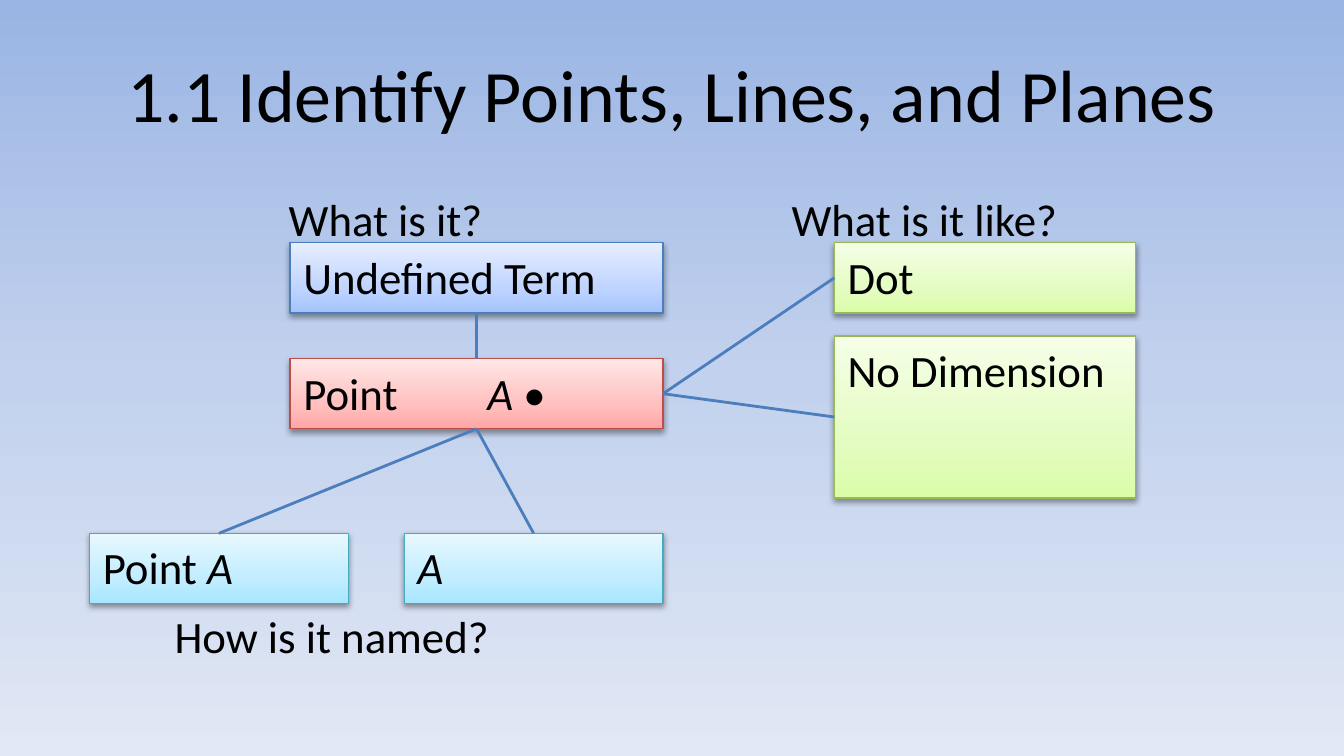
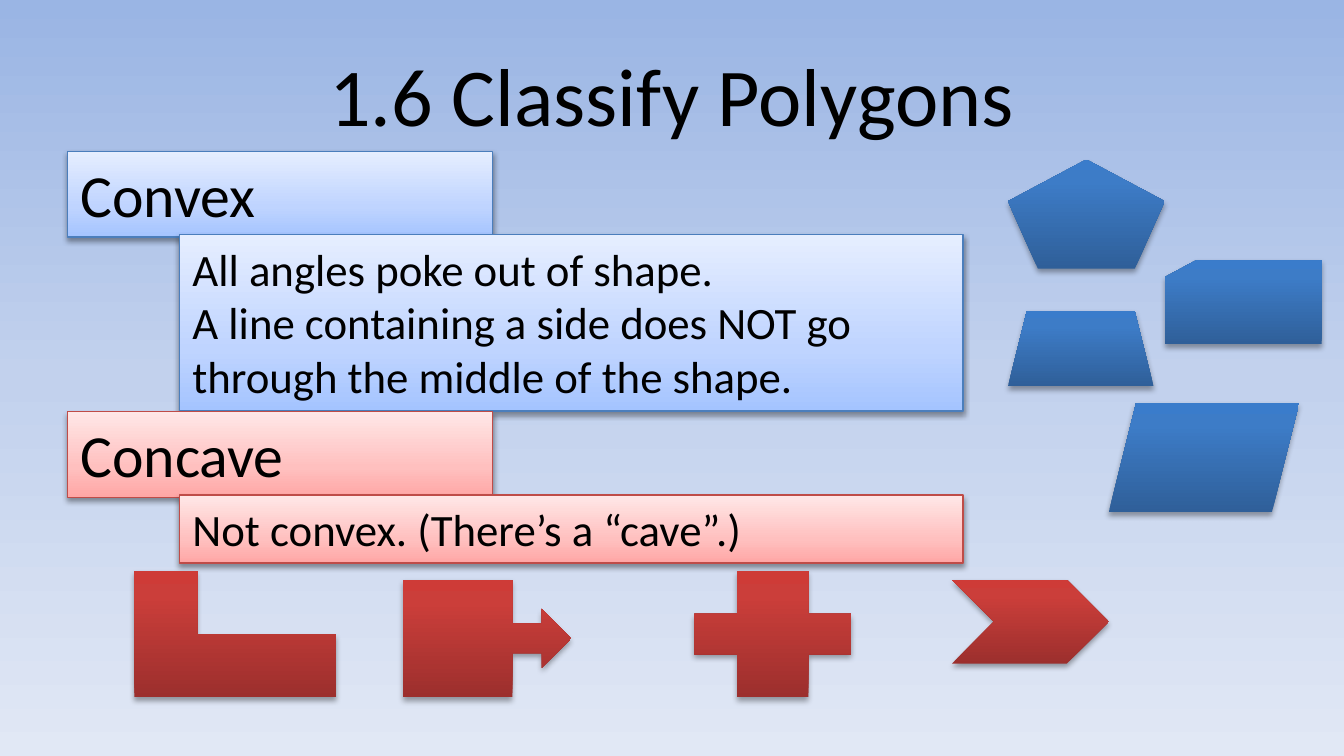
from lxml import etree
from pptx import Presentation
from pptx.dml.color import RGBColor
from pptx.enum.shapes import MSO_CONNECTOR, MSO_SHAPE
from pptx.enum.text import MSO_ANCHOR, PP_ALIGN
from pptx.oxml.ns import qn
from pptx.util import Inches, Pt

RECT = MSO_SHAPE.RECTANGLE
STRAIGHT = MSO_CONNECTOR.STRAIGHT
LEFT, CENTER = PP_ALIGN.LEFT, PP_ALIGN.CENTER
TOP, MIDDLE = MSO_ANCHOR.TOP, MSO_ANCHOR.MIDDLE
TOP_SITE, LEFT_SITE, BOTTOM_SITE, RIGHT_SITE = range(4)

# Shared look: gradients are (position in percent, colour)
FONT = "Calibri"
BLACK = RGBColor(0x00, 0x00, 0x00)
BLUE_LINE = RGBColor(0x4B, 0x7E, 0xBC)
RED_LINE = RGBColor(0xBF, 0x4C, 0x48)
GREEN_LINE = RGBColor(0x98, 0xB9, 0x55)
AQUA_LINE = RGBColor(0x46, 0xAA, 0xC5)


def stops(positions, *colors):
    return list(zip(positions, map(RGBColor.from_string, colors)))


PALE, DEEP = (0, 35, 100), (0, 80, 100)
SKY = stops((0, 50, 100), "9AB5E4", "C2D1ED", "E1E8F5")
BLUE = (stops(PALE, "A4C4FF", "BFD4FF", "E6EEFF"), BLUE_LINE)
RED = (stops(PALE, "FFA6A5", "FFC0BF", "FFE7E7"), RED_LINE)
GREEN = (stops(PALE, "DAFDA7", "E4FCC2", "F5FFE7"), GREEN_LINE)
AQUA = (stops(PALE, "A7E6FF", "C1EDFF", "E7F8FF"), AQUA_LINE)
DEEP_BLUE = (stops(DEEP, "2F5F99", "3D7CC7", "3A7CCB"), None)
DEEP_RED = (stops(DEEP, "9C2F2D", "CB3E3A", "CE3B37"), None)

# Grid: 120 columns by 90 rows; places are column, row, columns, rows
COLUMNS, ROWS = 120, 90
TITLE_PLACE = (6, 3.6, 108, 15)

# Points slide: a run starting with "*" is italic
POINTS_TITLE = ("1.1 Identify Points, Lines, and Planes", 39.6)
POINTS_BOXES = {
    "point": (["Point\t", "*A", " •"], RED, (25.9, 42.7, 33.3, 8.35)),
    "term": (["Undefined Term"], BLUE, (25.9, 28.9, 33.3, 8.35)),
    "point a": (["Point ", "*A"], AQUA, (8, 63.5, 23.1, 8.35)),
    "a": (["*A"], AQUA, (36.1, 63.5, 23.1, 8.35)),
    "dot": (["Dot"], GREEN, (74.5, 28.9, 26.9, 8.35)),
    "dimension": (["No Dimension"], GREEN, (74.5, 40, 26.9, 19.3)),
}
POINTS_LINKS = [
    ("term", BOTTOM_SITE, "point", TOP_SITE),
    ("point", BOTTOM_SITE, "point a", TOP_SITE),
    ("point", BOTTOM_SITE, "a", TOP_SITE),
    ("point", RIGHT_SITE, "dot", LEFT_SITE),
    ("point", RIGHT_SITE, "dimension", LEFT_SITE),
]
POINTS_LABELS = [
    ("What is it?", (24.6, 22, 34.6, 8)),
    ("What is it like?", (69.5, 22, 34.6, 8)),
    ("How is it named?", (14.4, 71.7, 64, 8)),
]
POINT_TAB = Inches(1.37)

# Polygons slide: term, explanation, colours, first row, explanation rows
POLYGONS_TITLE = ("1.6 Classify Polygons", 44)
POLYGON_TERMS = [
    ("Convex", ["All angles poke out of shape.",
                "A line containing a side does NOT go through the middle of the shape."],
     BLUE, 18, 21),
    ("Concave", ["Not convex. (There’s a “cave”.)"], RED, 49, 8.1),
]
TERM_ROWS, EXPLANATION_DROP = 10.2, 9.95
CROSS = MSO_SHAPE.CROSS
CROSS_ARM = 0.34
POLYGONS = [
    (MSO_SHAPE.REGULAR_PENTAGON, DEEP_BLUE, (90, 19, 14, 13)),
    (MSO_SHAPE.PARALLELOGRAM, DEEP_BLUE, (99, 48, 17, 13)),
    (MSO_SHAPE.TRAPEZOID, DEEP_BLUE, (90, 37, 13, 9)),
    (MSO_SHAPE.FLOWCHART_CARD, DEEP_BLUE, (104, 31, 14, 10)),
    (MSO_SHAPE.from_xml("corner"), DEEP_RED, (12, 68, 18, 15)),
    (MSO_SHAPE.RIGHT_ARROW_CALLOUT, DEEP_RED, (36, 69, 15, 14)),
    (CROSS, DEEP_RED, (62, 68, 14, 15)),
    (MSO_SHAPE.CHEVRON, DEEP_RED, (85, 69, 14, 10)),
]

deck = Presentation()
deck.slide_width, deck.slide_height = Inches(10), Inches(5.625)


def on_grid(place):
    column, row = deck.slide_width / COLUMNS, deck.slide_height / ROWS
    return [round(length * unit) for length, unit in zip(place, (column, row) * 2)]


def set_gradient(fill, element, colors, angle):
    fill.gradient()
    fill.gradient_angle = angle
    stop_list = next(element.iter(qn("a:gsLst")))
    for stop in list(stop_list):
        stop_list.remove(stop)
    for position, color in colors:
        stop = etree.SubElement(stop_list, qn("a:gs"), pos=str(position * 1000))
        etree.SubElement(stop, qn("a:srgbClr"), val=str(color))


def add_shadow(shape, opacity, distance):
    shape.shadow.inherit = False
    effects = shape.element.spPr.find(qn("a:effectLst"))
    shadow = etree.SubElement(
        effects, qn("a:outerShdw"), blurRad=str(Pt(3.1)), dist=str(Pt(distance)),
        dir="5400000", rotWithShape="0")
    color = etree.SubElement(shadow, qn("a:srgbClr"), val=str(BLACK))
    etree.SubElement(color, qn("a:alpha"), val=str(opacity * 1000))


def write(shape, paragraphs, size, align=LEFT, anchor=TOP):
    """Each paragraph is a list of runs."""
    frame = shape.text_frame
    frame.word_wrap = True
    frame.vertical_anchor = anchor
    for index, runs in enumerate(paragraphs):
        para = frame.add_paragraph() if index else frame.paragraphs[0]
        para.alignment = align
        for text in runs:
            span = para.add_run()
            span.text = text.removeprefix("*")
            span.font.name, span.font.size = FONT, Pt(size)
            span.font.color.rgb = BLACK
            if text.startswith("*"):
                span.font.italic = True


def add_figure(slide, kind, look, place):
    colors, outline = look
    shape = slide.shapes.add_shape(kind, *on_grid(place))
    set_gradient(shape.fill, shape.element, colors, 90)
    if outline is None:
        shape.line.fill.background()
        add_shadow(shape, 35, 1.8)
    else:
        shape.line.color.rgb, shape.line.width = outline, Pt(0.75)
        add_shadow(shape, 38, 1.6)
    return shape


def add_box(slide, paragraphs, look, place, size=24):
    box = add_figure(slide, RECT, look, place)
    write(box, paragraphs, size)
    return box


def add_link(slide, start, start_site, end, end_site):
    link = slide.shapes.add_connector(STRAIGHT, 0, 0, 0, 0)
    link.begin_connect(start, start_site)
    link.end_connect(end, end_site)
    link.line.color.rgb, link.line.width = BLUE_LINE, Pt(1.5)
    etree.SubElement(link.element.spPr, qn("a:effectLst"))


def add_slide(text, size):
    slide = deck.slides.add_slide(deck.slide_layouts.get_by_name("Title Only"))
    title = slide.shapes.title
    title.left, title.top, title.width, title.height = on_grid(TITLE_PLACE)
    write(title, [[text]], size, CENTER, MIDDLE)
    return slide


def build_points():
    slide = add_slide(*POINTS_TITLE)
    boxes = {name: add_box(slide, [runs], look, place)
             for name, (runs, look, place) in POINTS_BOXES.items()}
    # Tab stop between the word and the drawn point
    properties = boxes["point"].text_frame.paragraphs[0]._p.get_or_add_pPr()
    tabs = etree.SubElement(properties, qn("a:tabLst"))
    etree.SubElement(tabs, qn("a:tab"), pos=str(POINT_TAB), algn="l")
    for start, start_site, end, end_site in POINTS_LINKS:
        add_link(slide, boxes[start], start_site, boxes[end], end_site)
    for text, place in POINTS_LABELS:
        write(slide.shapes.add_textbox(*on_grid(place)), [[text]], 24)


def build_polygons():
    slide = add_slide(*POLYGONS_TITLE)
    for term, lines, look, row, rows in POLYGON_TERMS:
        add_box(slide, [[term]], look, (6, row, 38, TERM_ROWS), 32)
        add_box(slide, [[line] for line in lines], look,
                (16, row + EXPLANATION_DROP, 70, rows))
    for kind, look, place in POLYGONS:
        figure = add_figure(slide, kind, look, place)
        if kind == CROSS:
            figure.adjustments[0] = CROSS_ARM


def main():
    master = deck.slide_master
    set_gradient(master.background.fill, master.element, SKY, 270)
    build_points()
    build_polygons()
    deck.save("out.pptx")


if __name__ == "__main__":
    main()
